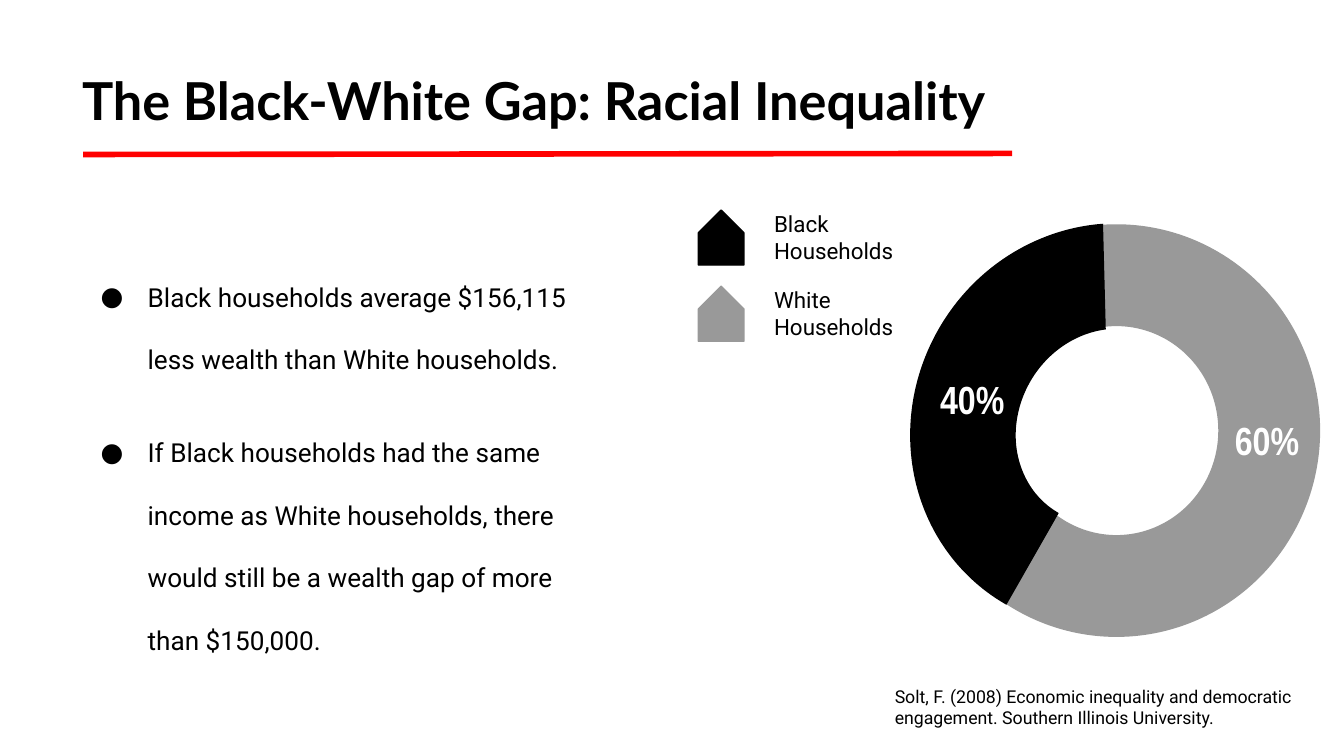
from pptx import Presentation
from pptx.dml.color import RGBColor
from pptx.enum.shapes import MSO_CONNECTOR, MSO_SHAPE
from pptx.enum.text import MSO_ANCHOR, MSO_AUTO_SIZE, PP_ALIGN
from pptx.oxml.ns import qn
from pptx.util import Cm, Pt
from lxml.etree import SubElement

BLACK, GRAY, WHITE, RED = "000000", "999999", "FFFFFF", "FF0000"
color = RGBColor.from_string


def place(shape, left, top, width, height):
    shape.left, shape.top = Cm(left), Cm(top)
    shape.width, shape.height = Cm(width), Cm(height)


def write(shape, lines, font, size, ink=BLACK, bold=False,
          align=PP_ALIGN.LEFT, anchor=MSO_ANCHOR.TOP):
    frame = shape.text_frame
    frame.text = "\n".join(lines)
    frame.word_wrap = True
    frame.auto_size = MSO_AUTO_SIZE.NONE
    frame.vertical_anchor = anchor
    frame.margin_left = frame.margin_right = Cm(0.25)
    frame.margin_top = frame.margin_bottom = Cm(0.25)
    for para in frame.paragraphs:
        para.alignment = align
        para.space_before = Pt(0)
        for run in para.runs:
            run.font.name, run.font.size = font, Pt(size)
            run.font.bold = bold
            run.font.color.rgb = color(ink)
    return frame


deck = Presentation()
deck.slide_width, deck.slide_height = Cm(25.4), Cm(14.29)
slide = deck.slides.add_slide(deck.slide_layouts[3])
shapes = slide.shapes
title, body, source = slide.placeholders

# Title and rule
place(title, 1.3, 1.04, 23.67, 1.6)
write(title, ["The Black-White Gap: Racial Inequality"], "Lato", 28, bold=True)
rule = shapes.add_connector(MSO_CONNECTOR.STRAIGHT,
                            Cm(19.13), Cm(2.9), Cm(1.57), Cm(2.92))
rule.line.color.rgb = color(RED)
rule.line.width = Pt(3)
SubElement(rule._element.spPr, qn("a:effectLst"))

# Bullet list
place(body, 1.27, 3.28, 9.8, 9.55)
points = [
    "Black households average $156,115 less wealth than White households.",
    "If Black households had the same income as White households, there "
    "would still be a wealth gap of more than $150,000.",
]
frame = write(body, points, "Roboto", 14, anchor=MSO_ANCHOR.BOTTOM)
frame.margin_bottom = Cm(0.43)
for para in frame.paragraphs:
    para.line_spacing = 2.0
    para.space_before = Pt(16)
    props = para._p.get_or_add_pPr()
    props.set("marL", str(Cm(1.27)))
    props.set("indent", str(-Cm(0.89)))
    tint = SubElement(props, qn("a:buClr"))
    SubElement(tint, qn("a:srgbClr")).set("val", BLACK)
    SubElement(props, qn("a:buFont")).set("typeface", "Roboto")
    SubElement(props, qn("a:buChar")).set("char", "●")

# Source note
place(source, 16.66, 12.75, 8.81, 1.04)
note = ("Solt, F. (2008) Economic inequality and democratic engagement. "
        "Southern Illinois University.")
para = write(source, [note], "Roboto", 9.5).paragraphs[0]
para.line_spacing = 0.95
props = para._p.get_or_add_pPr()
props.set("marL", "0")
props.set("indent", "0")
SubElement(props, qn("a:buNone"))

# Ring: full gray arc with the black arc on top
arcs = [
    (GRAY, (17.25, 4.24, 7.7, 7.8), 0, (108, 104.92, 0.25)),
    (BLACK, (17.25, 4.17, 7.39, 7.77), 210.4, (161.58, 34.87, 0.27)),
]
for fill, box, turn, bends in arcs:
    arc = shapes.add_shape(MSO_SHAPE.BLOCK_ARC, *map(Cm, box))
    for i, bend in enumerate(bends):
        arc.adjustments[i] = bend
    arc.rotation = turn
    arc.shadow.inherit = False
    arc.fill.solid()
    arc.fill.fore_color.rgb = color(fill)
    arc.line.fill.background()

# Ring labels
for text, left, top in [("60%", 22.94, 7.98), ("40%", 17.37, 7.21)]:
    label = shapes.add_textbox(Cm(left), Cm(top), Cm(2.01), Cm(0.66))
    write(label, [text], "Arial Narrow", 21, WHITE, True,
          PP_ALIGN.CENTER, MSO_ANCHOR.MIDDLE)

# Legend
for row, (name, fill) in enumerate([("Black", BLACK), ("White", GRAY)]):
    top = 3.89 + row * 1.44
    house = shapes.add_shape(MSO_SHAPE.PENTAGON, Cm(13.11), Cm(top + 0.17),
                             Cm(1.04), Cm(0.86))
    house.rotation = 270
    house.shadow.inherit = False
    house.fill.solid()
    house.fill.fore_color.rgb = color(fill)
    house.line.color.rgb = color(fill)
    house.line.width = Pt(0.75)
    label = shapes.add_textbox(Cm(14.38), Cm(top), Cm(2.87), Cm(1.17))
    write(label, [f"{name} Households"], "Roboto", 12,
          anchor=MSO_ANCHOR.MIDDLE)

deck.save("out.pptx")
